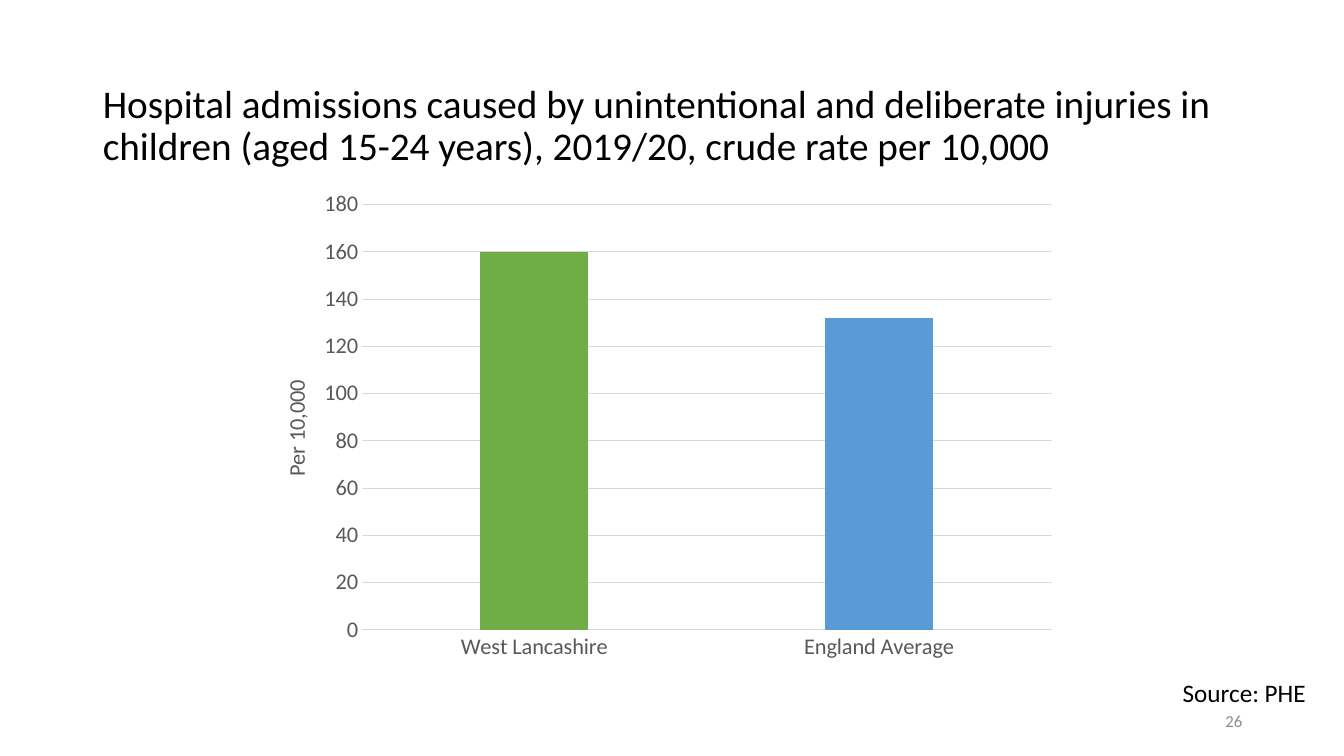
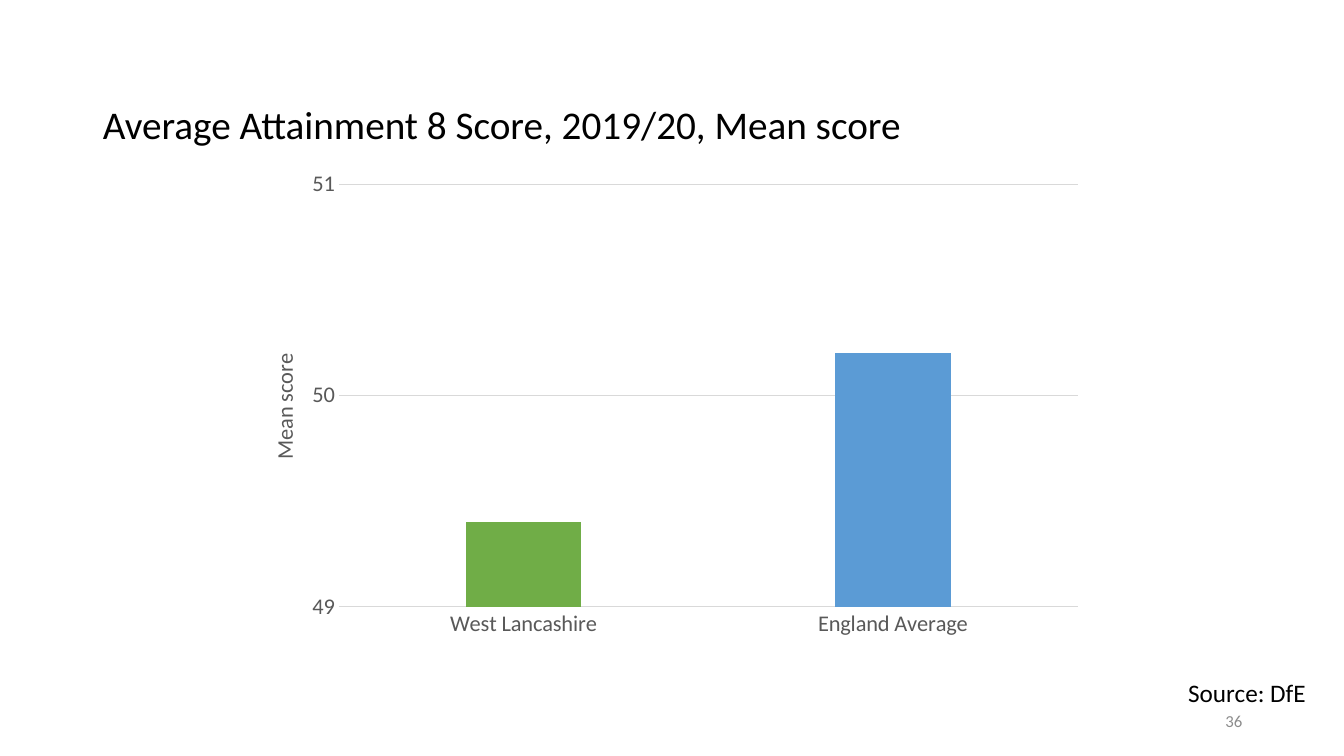
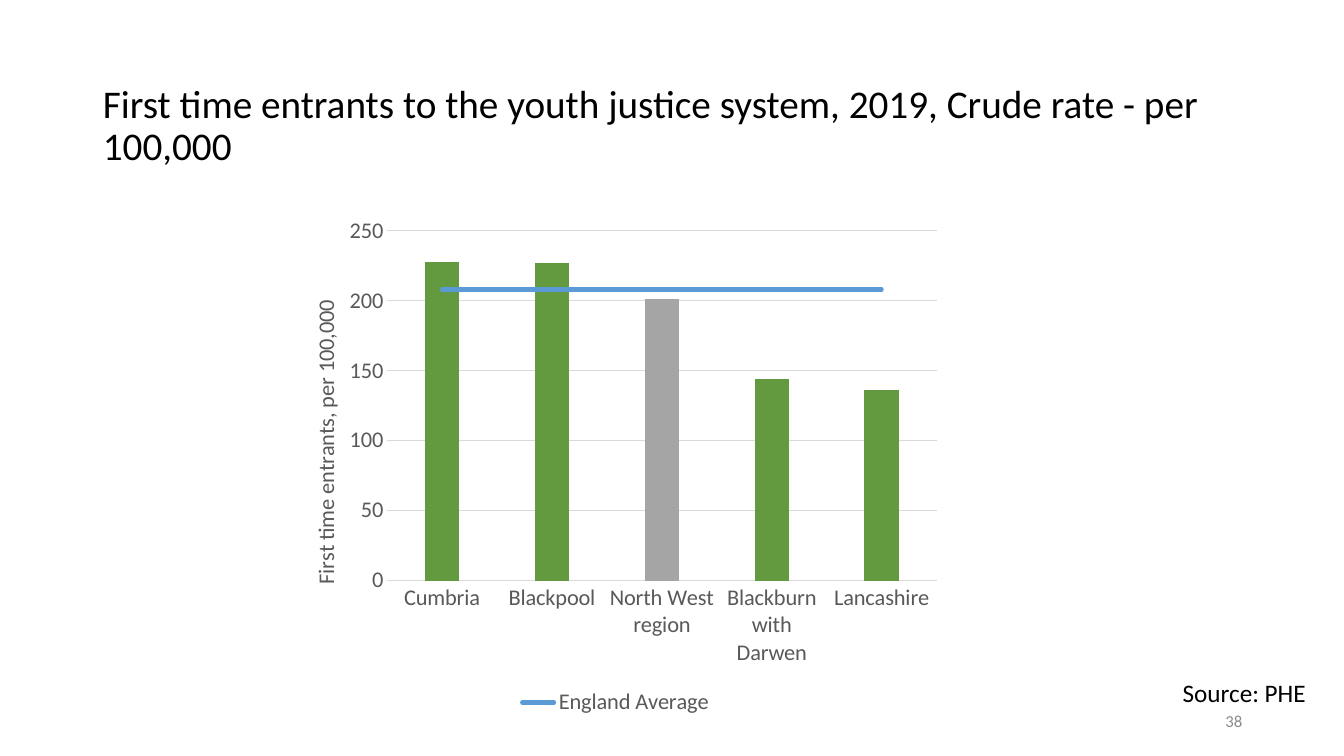
from pptx import Presentation
from pptx.chart.data import CategoryChartData
from pptx.dml.color import RGBColor
from pptx.enum.chart import (XL_CHART_TYPE, XL_LEGEND_POSITION, XL_MARKER_STYLE,
                             XL_TICK_MARK)
from pptx.enum.text import MSO_ANCHOR, MSO_AUTO_SIZE, PP_ALIGN
from pptx.oxml import parse_xml
from pptx.oxml.ns import nsdecls, qn
from pptx.util import Inches, Pt

COLORS = {
    "text": "000000",
    "axis": "595959",
    "grid": "D9D9D9",
    "page": "8C8C8C",
    "local": "70AD47",
    "area": "639A3F",
    "region": "A5A5A5",
    "england": "5B9BD5",
}
FONT = "Calibri"
AXIS_SIZE = 16


def apply(target, **values):
    for name, value in values.items():
        setattr(target, name, value)


def color(key):
    return RGBColor.from_string(COLORS[key])


def style_font(font, size, key):
    apply(font, name=FONT, size=Pt(size), bold=False)
    font.color.rgb = color(key)


def style_line(line, key, width):
    line.color.rgb = color(key)
    line.width = Pt(width)


def fill_solid(fmt, key):
    fmt.fill.solid()
    fmt.fill.fore_color.rgb = color(key)


def set_layout(parent, index, fractions, inner=False):
    """Give a chart part a fixed place, in fractions of the chart."""
    for old in parent.findall(qn("c:layout")):
        parent.remove(old)
    target = '<c:layoutTarget val="inner"/>' if inner else ""
    sizes = "".join(f'<c:{tag} val="{value:.4f}"/>'
                    for tag, value in zip("xywh", fractions))
    parent.insert(index, parse_xml(
        f'<c:layout {nsdecls("c")}><c:manualLayout>{target}'
        f'<c:xMode val="edge"/><c:yMode val="edge"/>{sizes}'
        "</c:manualLayout></c:layout>"))


class Deck:
    def __init__(self):
        self.prs = Presentation()
        apply(self.prs, slide_width=Inches(13.33), slide_height=Inches(7.5))
        self.slide = None

    def add_slide(self, title, page, source):
        self.slide = self.prs.slides.add_slide(self.prs.slide_layouts[5])
        heading = self.slide.shapes.title
        apply(heading, left=Inches(0.92), top=Inches(0.72),
              width=Inches(11.5), height=Inches(1.08))
        self.set_text(heading, title, 28, "text", PP_ALIGN.LEFT, MSO_ANCHOR.MIDDLE)
        heading.text_frame.paragraphs[0].line_spacing = 0.9
        self.label((9.42, 6.95, 3, 0.4), page, 12, "page", MSO_ANCHOR.MIDDLE)
        self.label((11.16, 6.67, 1.89, 0.4), source, 18, "text", MSO_ANCHOR.TOP)

    def set_text(self, shape, text, size, key, align, anchor):
        frame = shape.text_frame
        apply(frame, text=text, word_wrap=True, vertical_anchor=anchor,
              auto_size=MSO_AUTO_SIZE.NONE)
        frame.paragraphs[0].alignment = align
        style_font(frame.paragraphs[0].font, size, key)

    def label(self, box, text, size, key, anchor):
        shape = self.slide.shapes.add_textbox(*map(Inches, box))
        self.set_text(shape, text, size, key, PP_ALIGN.RIGHT, anchor)

    def add_bars(self, box, plot_box, title_at, axis_title, scale, values,
                 bar_color, highlight, average=None):
        """Boxes are in inches on the slide; scale is (min, max, step)."""
        data = CategoryChartData(number_format="General")
        data.categories = list(values)
        data.add_series("Series 1", list(values.values()))
        if average is not None:
            data.add_series("England Average", [average] * len(values))
        chart = self.slide.shapes.add_chart(
            XL_CHART_TYPE.COLUMN_CLUSTERED, *map(Inches, box), data).chart
        apply(chart, has_title=False, has_legend=False)
        style_font(chart.font, AXIS_SIZE, "text")

        # Bars, with one of them in its own colour
        bars = chart.plots[0]
        apply(bars, gap_width=219, overlap=-27, vary_by_categories=False)
        fill_solid(bars.series[0].format, bar_color)
        point, key = highlight
        fill_solid(bars.series[0].points[point].format, key)

        self.format_axes(chart, axis_title, scale)

        # Fixed places of the plot and the axis title
        left, top, width, height = box
        x, y, right, bottom = plot_box
        set_layout(chart.plots[0]._element.getparent(), 0,
                   ((x - left) / width, (y - top) / height,
                    (right - x) / width, (bottom - y) / height), inner=True)
        set_layout(chart.value_axis.axis_title._element, 1,
                   ((title_at[0] - left) / width, (title_at[1] - top) / height))
        if average is not None:
            self.add_average_line(chart)

    def format_axes(self, chart, axis_title, scale):
        low, high, step = scale
        no_ticks = dict(major_tick_mark=XL_TICK_MARK.NONE,
                        minor_tick_mark=XL_TICK_MARK.NONE)
        for axis in (chart.category_axis, chart.value_axis):
            apply(axis, **no_ticks)
            style_font(axis.tick_labels.font, AXIS_SIZE, "axis")
        style_line(chart.category_axis.format.line, "grid", 0.75)

        axis = chart.value_axis
        apply(axis, minimum_scale=low, maximum_scale=high, major_unit=step,
              has_major_gridlines=True)
        apply(axis.tick_labels, number_format="0", number_format_is_linked=False)
        axis.format.line.fill.background()
        style_line(axis.major_gridlines.format.line, "grid", 0.75)
        frame = axis.axis_title.text_frame
        frame.text = axis_title
        style_font(frame.paragraphs[0].runs[0].font, AXIS_SIZE, "axis")
        body = axis.axis_title._element.find(".//" + qn("a:bodyPr"))
        for name, value in {"rot": "-5400000", "vert": "horz"}.items():
            body.set(name, value)

    def add_average_line(self, chart):
        # The second series moves from the bars to a line plot on the same axes
        bars = chart.plots[0]._element
        series = bars.findall(qn("c:ser"))[1]
        for unused in series.findall(qn("c:invertIfNegative")):
            series.remove(unused)
        axis_ids = "".join(f'<c:axId val="{axis.get("val")}"/>'
                           for axis in bars.findall(qn("c:axId")))
        line_plot = parse_xml(
            f'<c:lineChart {nsdecls("c")}><c:grouping val="standard"/>'
            f'<c:varyColors val="0"/><c:marker val="1"/>{axis_ids}</c:lineChart>')
        line_plot.insert(2, series)
        bars.addnext(line_plot)

        average = chart.plots[1].series[0]
        average.smooth = False
        average.marker.style = XL_MARKER_STYLE.NONE
        style_line(average.format.line, "england", 3)
        series.find(".//" + qn("a:ln")).set("cap", "rnd")

        # Legend shows the line only
        chart.has_legend = True
        apply(chart.legend, position=XL_LEGEND_POSITION.BOTTOM,
              include_in_layout=False)
        style_font(chart.legend.font, AXIS_SIZE, "axis")
        chart.legend._element.find(qn("c:legendPos")).addnext(parse_xml(
            f'<c:legendEntry {nsdecls("c")}><c:idx val="0"/>'
            '<c:delete val="1"/></c:legendEntry>'))


def main():
    deck = Deck()

    # Hospital admissions
    deck.add_slide("Hospital admissions caused by unintentional and deliberate "
                   "injuries in children (aged 15-24 years), 2019/20, crude rate "
                   "per 10,000", "26", "Source: PHE")
    deck.add_bars((2.48, 1.8, 8.12, 4.87), (3.59, 2.03, 10.43, 6.25), (2.75, 3.73),
                  "Per 10,000", (0, 180, 20),
                  {"West Lancashire": 160, "England Average": 132},
                  "local", (1, "england"))

    # Attainment 8
    deck.add_slide("Average Attainment 8 Score, 2019/20, Mean score",
                   "36", "Source: DfE")
    deck.add_bars((2.35, 1.6, 8.51, 4.83), (3.36, 1.83, 10.69, 6.02), (2.63, 3.47),
                  "Mean score", (49, 51, 1),
                  {"West Lancashire": 49.4, "England Average": 50.2},
                  "local", (1, "england"))

    # Youth justice
    deck.add_slide("First time entrants to the youth justice system, 2019, "
                   "Crude rate - per 100,000", "38", "Source: PHE")
    deck.add_bars((2.79, 2.05, 6.63, 5.1), (3.84, 2.29, 9.29, 5.76), (3.04, 2.94),
                  "First time entrants, per 100,000", (0, 250, 50),
                  {"Cumbria": 228, "Blackpool": 227, "North West region": 201,
                   "Blackburn with Darwen": 144, "Lancashire": 136},
                  "area", (2, "region"), average=208)

    deck.prs.save("out.pptx")


if __name__ == "__main__":
    main()
